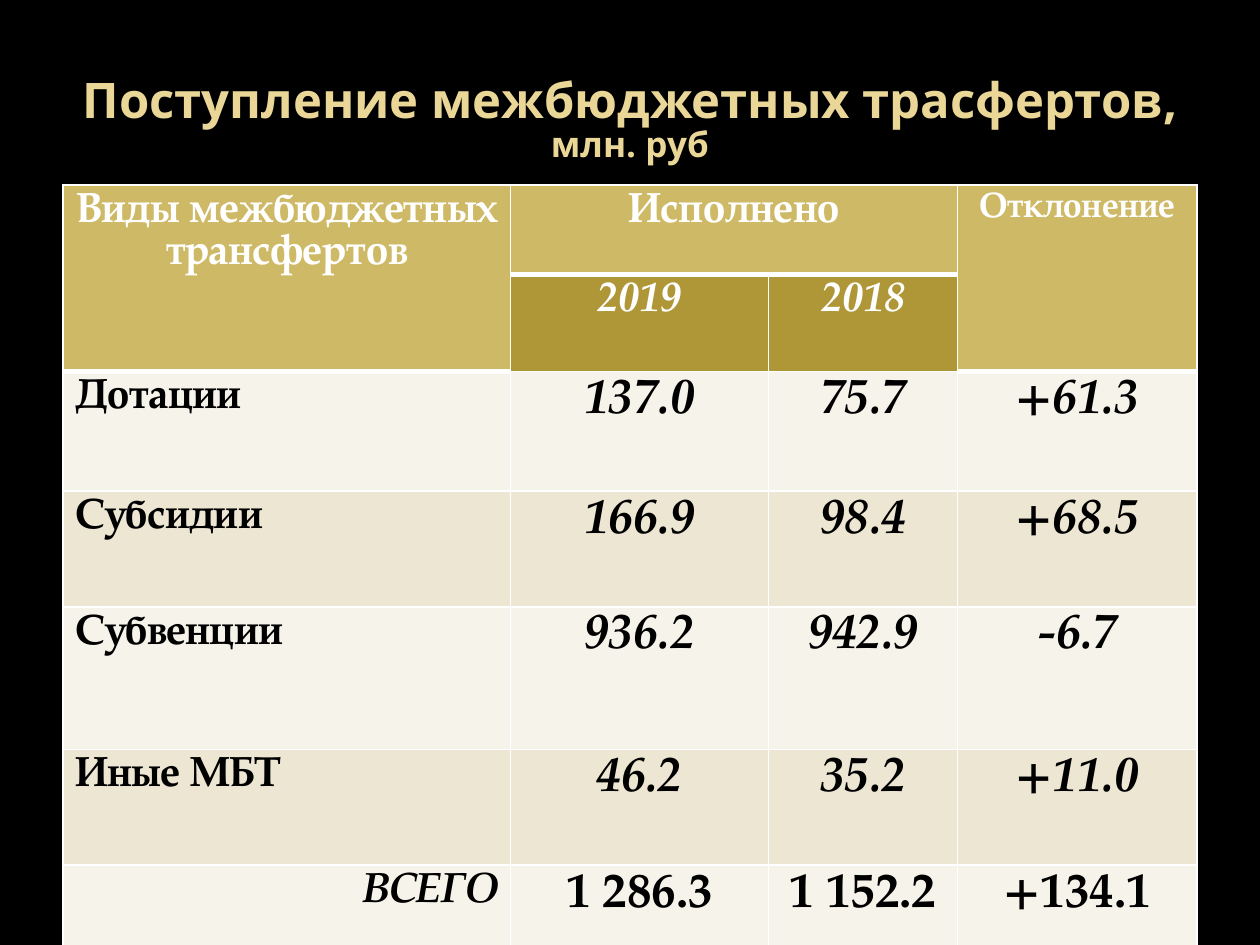
from lxml.etree import SubElement
from pptx import Presentation
from pptx.dml.color import RGBColor
from pptx.enum.text import MSO_ANCHOR, PP_ALIGN
from pptx.oxml.ns import qn
from pptx.util import Inches, Pt

# Content
TITLE = [("Поступление межбюджетных трасфертов, ", 28), ("млн. руб", 20)]
HEADERS = [  # row, column, row span, column span, text, size
    (0, 0, 2, 1, "Виды межбюджетных \nтрансфертов", 24),
    (0, 1, 1, 2, "Исполнено", 24),
    (0, 3, 2, 1, "Отклонение", 20),
]
YEARS = ["2019", "2018"]
TRANSFERS = [
    ("Дотации", "137.0", "75.7", "+61.3"),
    ("Субсидии", "166.9", "98.4", "+68.5"),
    ("Субвенции", "936.2", "942.9", "-6.7"),
    ("Иные МБТ", "46.2", "35.2", "+11.0"),
    ("ВСЕГО", "1 286.3", "1 152.2", "+134.1"),
]

# Style
COLORS = {
    "background": "000000", "title": "EAD696", "header": "CEB966",
    "year": "AF9738", "light": "F6F3EA", "dark": "EDE6D3",
    "white": "FFFFFF", "text": "000000",
}
TITLE_FONT, TABLE_FONT = "Open Sans", "TeX Gyre Pagella"
COLUMN_WIDTHS = [3.55, 2.05, 1.5, 1.9]
ROW_HEIGHTS = [0.71, 0.75, 0.95, 0.92, 1.13, 0.92, 0.92]


def color(name):
    return RGBColor.from_string(COLORS[name])


def set_font(font, color_name, **values):
    for name, value in values.items():
        setattr(font, name, value)
    font.color.rgb = color(color_name)


def set_borders(cell, bottom=1):
    properties = cell._tc.get_or_add_tcPr()
    widths = {"a:lnL": 1, "a:lnR": 1, "a:lnT": 1, "a:lnB": bottom}
    for index, (tag, width) in enumerate(widths.items()):
        line = SubElement(properties, qn(tag), w=str(Pt(width)))
        fill = SubElement(line, qn("a:solidFill"))
        SubElement(fill, qn("a:srgbClr"), val=COLORS["white"])
        properties.insert(index, line)


def fill_cell(cell, text, size, fill, text_color="text", align=PP_ALIGN.CENTER, italic=False):
    cell.fill.solid()
    cell.fill.fore_color.rgb = color(fill)
    cell.text = text
    for paragraph in cell.text_frame.paragraphs:
        paragraph.alignment = align
        paragraph.line_spacing = Pt(size)
        set_font(paragraph.runs[0].font, text_color, name=TABLE_FONT,
                 size=Pt(size), bold=True, italic=italic)


presentation = Presentation()
presentation.slide_width, presentation.slide_height = Inches(10), Inches(7.5)
slide = presentation.slides.add_slide(presentation.slide_layouts[5])
slide.background.fill.solid()
slide.background.fill.fore_color.rgb = color("background")

# Title
title = slide.shapes.title
title.left, title.top, title.width, title.height = map(Inches, (0.5, 0.3, 9, 1.25))
frame = title.text_frame
frame.word_wrap = True
frame.vertical_anchor = MSO_ANCHOR.MIDDLE
frame.margin_top = Inches(0.13)
paragraph = frame.paragraphs[0]
paragraph.alignment = PP_ALIGN.CENTER
paragraph.line_spacing = 0.85
for text, size in TITLE:
    run = paragraph.add_run()
    run.text = text
    set_font(run.font, "title", name=TITLE_FONT, size=Pt(size), bold=True)

# Table grid
table = slide.shapes.add_table(
    len(ROW_HEIGHTS), len(COLUMN_WIDTHS), Inches(0.5), Inches(1.47),
    Inches(sum(COLUMN_WIDTHS)), Inches(sum(ROW_HEIGHTS))).table
for column, width in zip(table.columns, COLUMN_WIDTHS):
    column.width = Inches(width)
for row, height in zip(table.rows, ROW_HEIGHTS):
    row.height = Inches(height)

# Header cells
thick = set()
for row, column, row_span, column_span, text, size in HEADERS:
    last = (row + row_span - 1, column + column_span - 1)
    table.cell(row, column).merge(table.cell(*last))
    fill_cell(table.cell(row, column), text, size, "header", "white")
    thick |= {(r, c) for r in range(row, last[0] + 1) for c in range(column, last[1] + 1)}
for column, year in enumerate(YEARS, 1):
    fill_cell(table.cell(1, column), year, 24, "year", "white", italic=True)

# Transfer rows, the last one being the total
for row, values in enumerate(TRANSFERS, 2):
    total = row == len(ROW_HEIGHTS) - 1
    for column, text in enumerate(values):
        label = column == 0
        side = PP_ALIGN.RIGHT if total else PP_ALIGN.LEFT
        fill_cell(table.cell(row, column), text, 24 if label else 28,
                  "dark" if row % 2 else "light",
                  align=side if label else PP_ALIGN.CENTER, italic=label == total)

# Borders
for row in range(len(ROW_HEIGHTS)):
    for column in range(len(COLUMN_WIDTHS)):
        set_borders(table.cell(row, column), 3 if (row, column) in thick else 1)

presentation.save("out.pptx")
